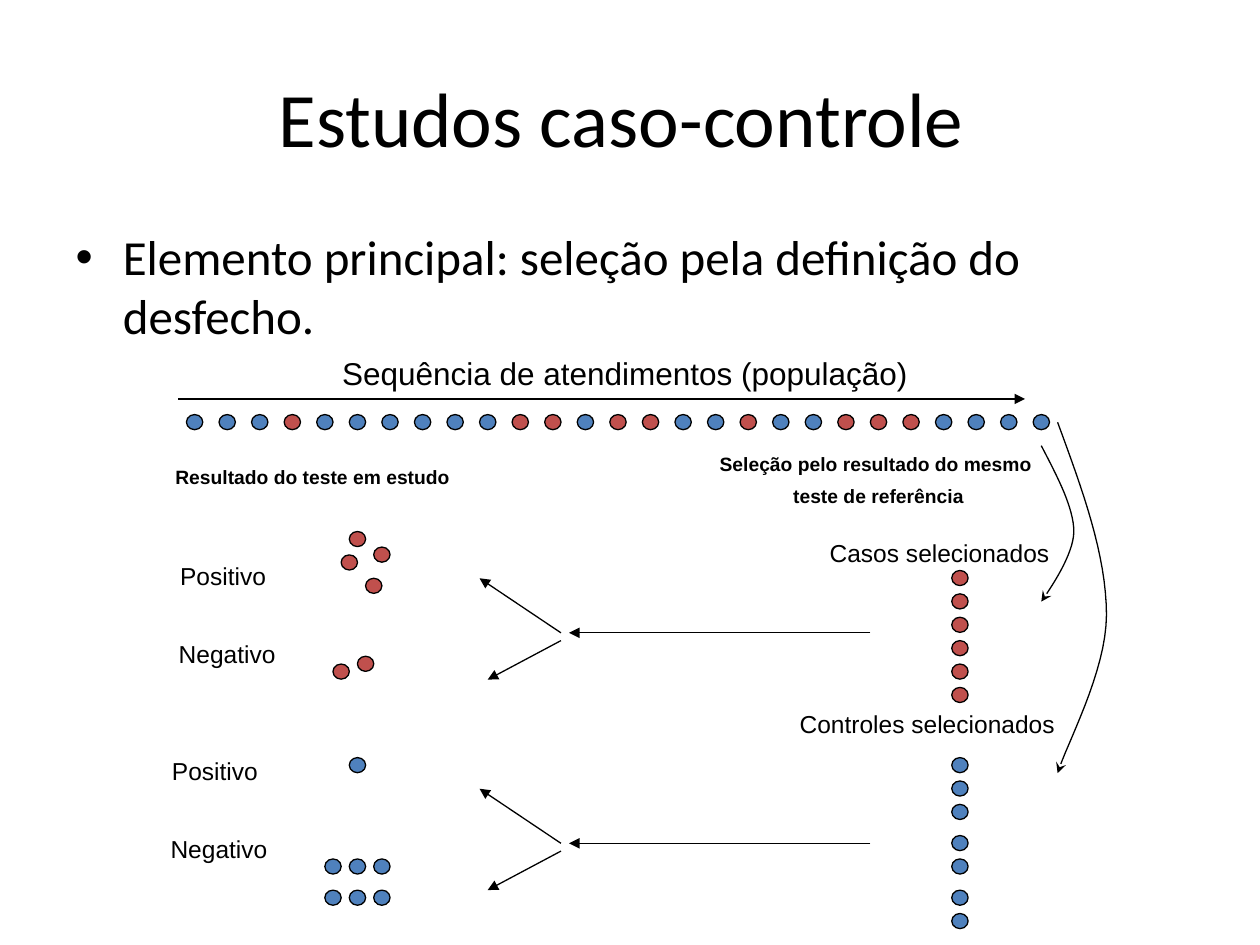
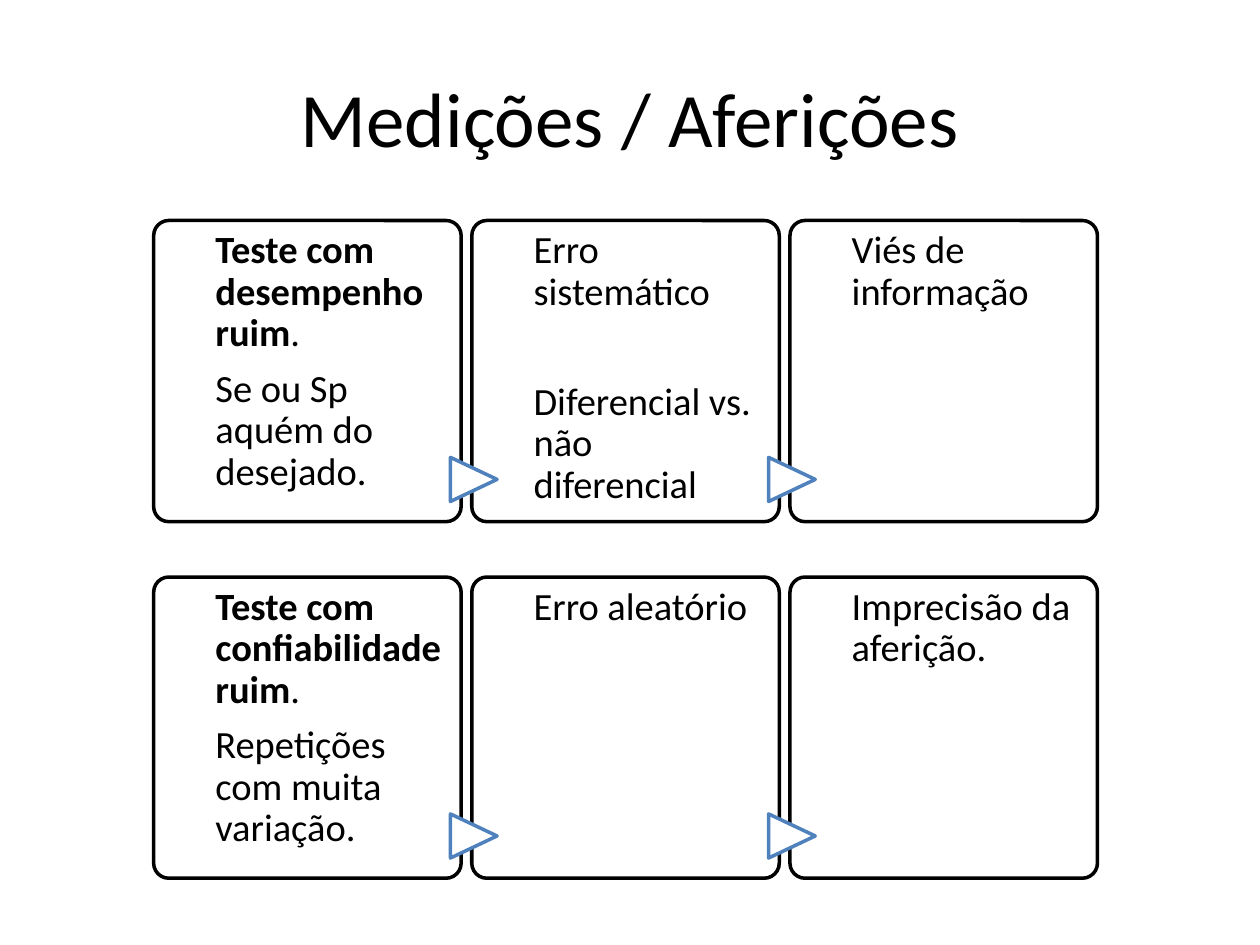
from lxml.etree import SubElement
from pptx import Presentation
from pptx.dml.color import RGBColor
from pptx.enum.shapes import MSO_CONNECTOR as CONN, MSO_SHAPE as SHAPE
from pptx.enum.text import MSO_ANCHOR as ANCHOR, MSO_AUTO_SIZE as AUTO, PP_ALIGN as ALIGN
from pptx.oxml.ns import qn
from pptx.util import Inches, Pt

BLACK = RGBColor(0, 0, 0)
WHITE = RGBColor(255, 255, 255)
BLUE = RGBColor(0x4F, 0x81, 0xBD)
RED = RGBColor(0xC0, 0x50, 0x4D)

WIDTH, HEIGHT = 10, 7.5
LEFT, TOP = 1.48, 3.29
COL, ROW = 6.72 / 104, 3.96 / 64
DOT_W, DOT_H = 0.13, 0.12

TITLE = dict(name="Calibri", size=Pt(44))
BODY = dict(name="Calibri", size=Pt(28))
CARD = dict(name="Calibri", size=Pt(22))
LABEL = dict(name="Arial", size=Pt(14))
HEADING = dict(name="Arial", size=Pt(18))
CAPTION = dict(name="Arial", size=Pt(11), bold=True)

POPULATION = "BBBRBBBBBBRRBRRBBRBBRRRBBBB"
CASES = [(94, row) for row in range(20, 36, 3)]
CONTROLS = [(94, row) for row in (44, 47, 50, 54, 57, 61, 64)]
TESTED_CASES = [(20, 15), (19, 18), (22, 21), (23, 17), (21, 31), (18, 32)]
TESTED_CONTROLS = [(20, 44)] + [(c, r) for r in (57, 61) for c in (17, 20, 23)]

LABELS = [
    ("Casos selecionados", 77, 15, 31),
    ("Controles selecionados", 73, 37, 36),
    ("Positivo", -3, 18, 15),
    ("Negativo", -3, 28, 16),
    ("Positivo", -4, 43, 15),
    ("Negativo", -4, 53, 16),
]
SELECTION_CURVES = [
    [(105, 4), (107, 8), (109, 12), (109, 15), (109, 18), (106, 22.5), (105, 24)],
    [(107, 1), (110, 9.5), (113, 18), (113, 25.7), (113, 33), (108, 42.5), (107, 46)],
]
CARDS = [
    [[("Teste com desempenho ruim", "."), "Se ou Sp aquém do desejado."],
     ["Erro sistemático", "Diferencial vs. não diferencial"],
     ["Viés de informação"]],
    [[("Teste com confiabilidade ruim", "."), "Repetições com muita variação."],
     ["Erro aleatório"],
     ["Imprecisão da aferição."]],
]


def grid(col, row):
    return Inches(LEFT + col * COL), Inches(TOP + row * ROW)


def style(font, fmt):
    for key, value in fmt.items():
        setattr(font, key, value)
    font.color.rgb = BLACK


def place(sp, left, top, width, height):
    box = dict(left=WIDTH * left, top=HEIGHT * top, width=WIDTH * width, height=HEIGHT * height)
    for key, value in box.items():
        setattr(sp, key, Inches(value))


def fill_placeholder(sp, text, fmt, box):
    place(sp, *box)
    tf = sp.text_frame
    tf.text = text
    tf.auto_size = AUTO.NONE
    p = tf.paragraphs[0]
    p.space_before = Pt(0)
    style(p.runs[0].font, fmt)


def new_slide(prs, layout, title):
    s = prs.slides.add_slide(prs.slide_layouts[layout])
    fill_placeholder(s.shapes.title, title, TITLE, (0.05, 0.04, 0.9, 1 / 6))
    return s


def outline(sp, line, width, fill=None):
    sp.shadow.inherit = False
    sp.line.color.rgb = line
    sp.line.width = Pt(width)
    if fill is None:
        sp.fill.background()
    else:
        sp.fill.solid()
        sp.fill.fore_color.rgb = fill


def arrowhead(sp, kind):
    ln = sp._element.spPr.find(qn("a:ln"))
    SubElement(ln, qn("a:tailEnd"), type=kind)


def dots(s, cells, color):
    for cell in cells:
        sp = s.shapes.add_shape(SHAPE.OVAL, *grid(*cell), Inches(DOT_W), Inches(DOT_H))
        outline(sp, BLACK, 0.75, color)


def arrow(s, start, end):
    c = s.shapes.add_connector(CONN.STRAIGHT, *grid(*start), *grid(*end))
    c.line.color.rgb = BLACK
    c.line.width = Pt(0.75)
    arrowhead(c, "triangle")
    SubElement(c._element.spPr, qn("a:effectLst"))


def fork(s, row):
    arrow(s, (84, row), (47, row))
    arrow(s, (46, row), (36, row - 7))
    arrow(s, (46, row + 1), (37, row + 6))


def bezier(points, steps=16):
    for i in range(1, steps + 1):
        t = i / steps
        weights = ((1 - t) ** 3, 3 * t * (1 - t) ** 2, 3 * t * t * (1 - t), t ** 3)
        yield tuple(sum(w * pt[axis] for w, pt in zip(weights, points)) for axis in (0, 1))


def curved_arrow(s, points):
    builder = s.shapes.build_freeform(*grid(*points[0]))
    path = [*bezier(points[:4]), *bezier(points[3:])]
    builder.add_line_segments([grid(*pt) for pt in path], close=False)
    sp = builder.convert_to_shape()
    outline(sp, BLACK, 0.75)
    arrowhead(sp, "stealth")


def label(s, lines, col, row, cols, rows=5, fmt=LABEL):
    sp = s.shapes.add_textbox(*grid(col, row), Inches(cols * COL), Inches(rows * ROW))
    tf = sp.text_frame
    tf.word_wrap = True
    for i, line in enumerate(lines):
        p = tf.paragraphs[0] if i == 0 else tf.add_paragraph()
        p.alignment = ALIGN.CENTER
        p.space_before = fmt["size"] // 2 if i else Pt(0)
        r = p.add_run()
        r.text = line
        style(r.font, fmt)


def card_text(s, x, y, height, paragraphs, gap):
    tf = s.shapes.add_textbox(Inches(x), Inches(y), Inches(1.82), Inches(height)).text_frame
    margins = dict(margin_left=0, margin_top=Inches(0.08), margin_right=0, margin_bottom=0)
    for key, value in dict(margins, word_wrap=True, vertical_anchor=ANCHOR.TOP).items():
        setattr(tf, key, value)
    for i, content in enumerate(paragraphs):
        p = tf.paragraphs[0] if i == 0 else tf.add_paragraph()
        p.line_spacing = 0.9
        p.space_after = Pt(gap)
        parts = content if isinstance(content, tuple) else (content,)
        for j, part in enumerate(parts):
            r = p.add_run()
            r.text = part
            style(r.font, dict(CARD, bold=len(parts) > 1 and j == 0))


def card(s, row, col, paragraphs):
    width, height = 2.44, 2.39
    x, y = 1.22 + col * 2.525, 1.75 + row * 2.83
    sp = s.shapes.add_shape(SHAPE.ROUNDED_RECTANGLE, *map(Inches, (x, y, width, height)))
    sp.adjustments[0] = 0.05
    outline(sp, BLACK, 2)
    if col:
        sp = s.shapes.add_shape(SHAPE.FLOWCHART_EXTRACT,
                                *map(Inches, (x - 0.16, y + 1.87, 0.35, 0.37)))
        sp.rotation = 90
        outline(sp, BLUE, 2, WHITE)
    card_text(s, x + 0.49, y, height, paragraphs, 39 if (row, col) == (0, 1) else 7.7)


def case_control_slide(prs):
    s = new_slide(prs, 1, "Estudos caso-controle ")
    fill_placeholder(s.placeholders[1], "Elemento principal: seleção pela definição do desfecho.",
                     BODY, (0.05, 1.75 / HEIGHT, 0.9, 1.21 / HEIGHT))
    label(s, ["Sequência de atendimentos (população)"], 5.7, -8.6, 96.3, 6.5, HEADING)
    arrow(s, (-1, -2), (103, -2))
    for key, color in dict(B=BLUE, R=RED).items():
        dots(s, [(4 * i, 0) for i, kind in enumerate(POPULATION) if kind == key], color)
    label(s, ["Resultado do teste em estudo"], -4, 5.7, 39, 4, CAPTION)
    label(s, ["Seleção pelo resultado do mesmo ", "teste de referência"], 63, 4, 44, 8, CAPTION)
    for text, col, row, cols in LABELS:
        label(s, [text], col, row, cols)
    for points in SELECTION_CURVES:
        curved_arrow(s, points)
    dots(s, CASES + TESTED_CASES, RED)
    dots(s, CONTROLS + TESTED_CONTROLS, BLUE)
    for row in (28, 55):
        fork(s, row)


def measurement_slide(prs):
    s = new_slide(prs, 5, "Medições / Aferições")
    for row, cards in enumerate(CARDS):
        for col, paragraphs in enumerate(cards):
            card(s, row, col, paragraphs)


def main():
    prs = Presentation()
    prs.slide_width, prs.slide_height = Inches(WIDTH), Inches(HEIGHT)
    case_control_slide(prs)
    measurement_slide(prs)
    prs.save("out.pptx")


if __name__ == "__main__":
    main()
